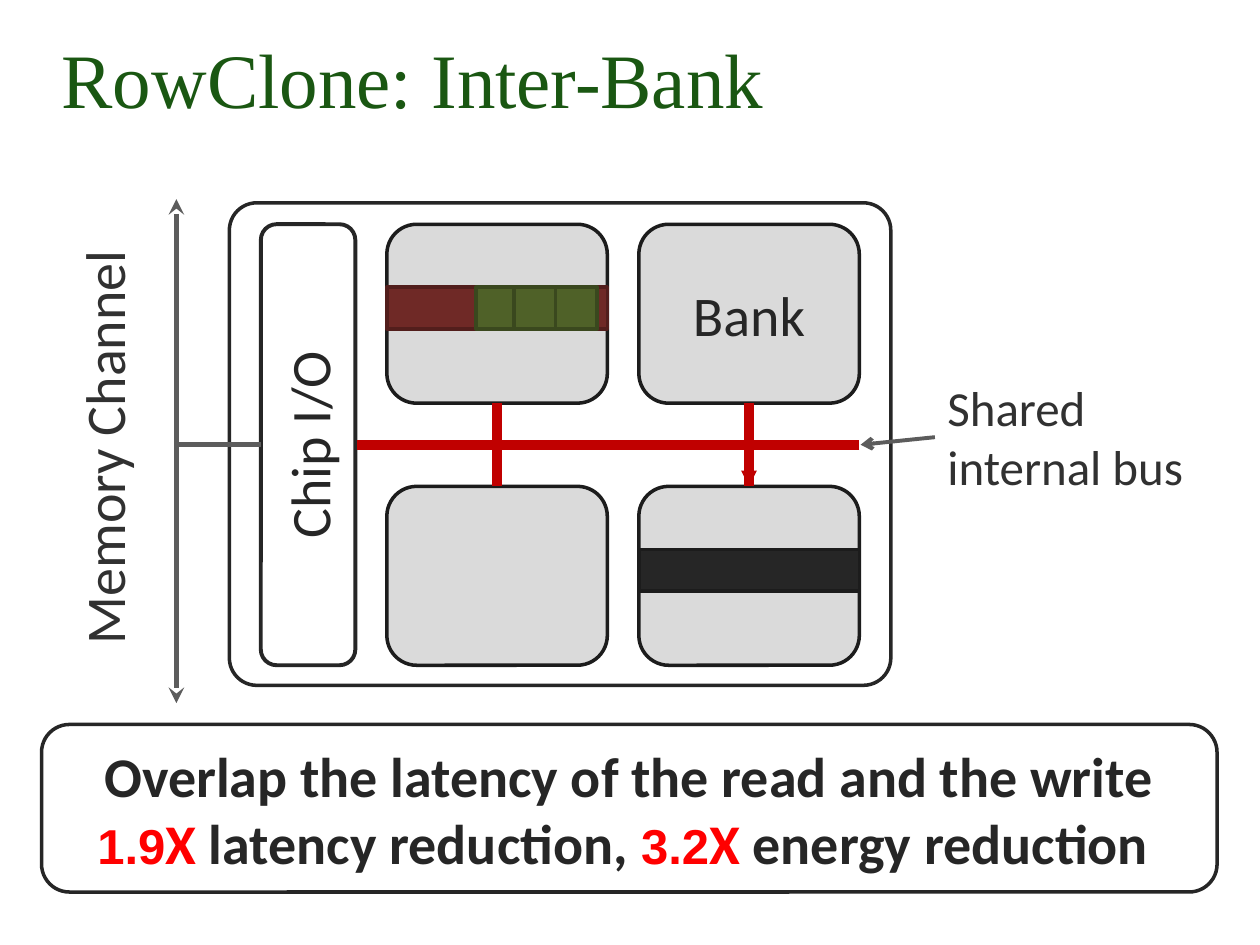
import lxml.etree
import pptx
import pptx.util
import pptx.dml.color
import pptx.enum.shapes
import pptx.enum.text
import pptx.oxml.ns

Inches, Pt = pptx.util.Inches, pptx.util.Pt
RGBColor = pptx.dml.color.RGBColor
SHAPE = pptx.enum.shapes.MSO_SHAPE
CONNECTOR = pptx.enum.shapes.MSO_CONNECTOR
ALIGN = pptx.enum.text.PP_ALIGN
ANCHOR = pptx.enum.text.MSO_ANCHOR
qn = pptx.oxml.ns.qn

WHITE = RGBColor(0xFF, 0xFF, 0xFF)
TITLE_GREEN = RGBColor(0x1A, 0x57, 0x12)
DARK = RGBColor(0x26, 0x26, 0x26)
LABEL = RGBColor(0x31, 0x31, 0x31)
WIRE = RGBColor(0x5C, 0x5C, 0x5C)
BANK_FILL = RGBColor(0xDA, 0xDA, 0xDA)
BANK_LINE = RGBColor(0x1C, 0x1C, 0x1C)
BUS_RED = RGBColor(0xC0, 0x00, 0x00)
ROW_RED = RGBColor(0x6F, 0x29, 0x26)
ROW_RED_LINE = RGBColor(0x52, 0x1E, 0x1C)
DATA_GREEN = RGBColor(0x4F, 0x61, 0x28)
DATA_GREEN_LINE = RGBColor(0x3A, 0x48, 0x1E)
RED = RGBColor(0xFF, 0x00, 0x00)


def set_font(font, size, color, name="Calibri", bold=None):
    font.name, font.size, font.bold = name, Pt(size), bold
    font.color.rgb = color


def add_box(shapes, kind, x, y, w, h, fill, line, width=2):
    sp = shapes.add_shape(kind, Inches(x), Inches(y), Inches(w), Inches(h))
    sp.shadow.inherit = False
    sp.fill.solid()
    sp.fill.fore_color.rgb = fill
    sp.line.color.rgb = line
    sp.line.width = Pt(width)
    return sp


def label_box(sp, text, bold=None):
    tf = sp.text_frame
    tf.vertical_anchor = ANCHOR.MIDDLE
    p = tf.paragraphs[0]
    p.text, p.alignment = text, ALIGN.CENTER
    set_font(p.font, 32, DARK, bold=bold)


def add_text(shapes, x, y, w, h, text, size, color, name="Calibri", wrap=True):
    sp = shapes.add_textbox(Inches(x), Inches(y), Inches(w), Inches(h))
    tf = sp.text_frame
    tf.word_wrap = wrap
    p = tf.paragraphs[0]
    p.text = text
    set_font(p.font, size, color, name)
    return sp


def add_line(shapes, x1, y1, x2, y2, color, width, head=None, tail=None,
             kind=CONNECTOR.STRAIGHT):
    c = shapes.add_connector(kind, Inches(x1), Inches(y1), Inches(x2), Inches(y2))
    c.line.color.rgb = color
    c.line.width = Pt(width)
    spPr = c._element.spPr
    ln = spPr.find(qn("a:ln"))
    for tag, arrow in (("a:headEnd", head), ("a:tailEnd", tail)):
        if arrow:
            lxml.etree.SubElement(ln, qn(tag), type=arrow)
    lxml.etree.SubElement(spPr, qn("a:effectLst"))
    return c


def add_title(shapes, x, y, w, h):
    sp = add_text(shapes, x, y, w, h, "RowClone: Inter-Bank", 44, TITLE_GREEN,
                  "Times New Roman")
    tf = sp.text_frame
    tf.margin_left = tf.margin_right = Inches(0.03)
    tf.margin_top = tf.margin_bottom = Inches(0.03)


def add_channel(shapes, x, y, h, chip_x, bus_y):
    """Vertical memory channel, its label and its link to the chip."""
    add_line(shapes, x, y, x, y + h, WIRE, 3, "stealth", "stealth")
    label = add_text(shapes, x - 2.26, bus_y - 0.3, 3.36, 0.64, "Memory Channel",
                     32, LABEL, wrap=False)
    label.rotation = 270
    label.text_frame.paragraphs[0].alignment = ALIGN.CENTER
    add_line(shapes, chip_x, bus_y, x, bus_y, WIRE, 3)


def add_chip(shapes, x, y, w, h):
    """Chip outline, I/O block, 2 x 2 banks, internal bus and copied rows."""
    chip = add_box(shapes, SHAPE.ROUNDED_RECTANGLE, x, y, w, h, WHITE, DARK)
    chip.adjustments[0] = 0.057
    io_x, top, inner_h = x + 0.25, y + 0.17, h - 0.33
    bank_w, bank_h, row_h = 1.75, 1.42, 0.33
    cols = [x + 1.25, x + 3.25]
    rows = [top, top + inner_h - bank_h]
    mids = [col + bank_w / 2 for col in cols]
    bus_y = top + inner_h / 2

    # Chip I/O, with upward text
    chip_io = add_box(shapes, SHAPE.ROUNDED_RECTANGLE, io_x, top, 0.75, inner_h,
                      WHITE, DARK, 2.25)
    label_box(chip_io, "Chip I/O")
    chip_io.text_frame._txBody.find(qn("a:bodyPr")).set("vert", "vert270")

    # Banks
    banks = [add_box(shapes, SHAPE.ROUNDED_RECTANGLE, col, row, bank_w, bank_h,
                     BANK_FILL, BANK_LINE) for row in rows for col in cols]
    label_box(banks[1], "Bank")

    # Shared internal bus
    gap_top, gap_bottom = rows[0] + bank_h, rows[1]
    bus = shapes.add_group_shape().shapes
    add_line(bus, cols[1] + bank_w, bus_y, io_x + 0.76, bus_y, BUS_RED, 6)
    for mid in mids:
        add_line(bus, mid, gap_top, mid, gap_bottom, BUS_RED, 6)

    # Source and destination rows
    add_box(shapes, SHAPE.RECTANGLE, cols[0], rows[0] + 0.5, bank_w, row_h,
            ROW_RED, ROW_RED_LINE)
    add_box(shapes, SHAPE.RECTANGLE, cols[1], rows[1] + 0.5, bank_w, row_h,
            DARK, BANK_LINE)

    # Copy path: an elbow turned a quarter so that it leaves downwards
    half_w, half_h = (gap_bottom - gap_top) / 2, (mids[1] - mids[0]) / 2
    mid_x = sum(mids) / 2
    copy_line = add_line(shapes, mid_x + half_w, bus_y - half_h, mid_x - half_w,
                         bus_y + half_h, BUS_RED, 3, tail="triangle",
                         kind=CONNECTOR.ELBOW)
    copy_line._element.spPr.find(qn("a:xfrm")).set("rot", str(270 * 60000))

    # Data blocks in the source row
    for offset in (0.71, 1.01, 1.34):
        add_box(shapes, SHAPE.RECTANGLE, cols[0] + offset, rows[0] + 0.5, row_h,
                row_h, DATA_GREEN, DATA_GREEN_LINE)


def add_bus_label(shapes, x, y, w, h, bus_x, bus_y):
    add_text(shapes, x, y, w, h, "Shared internal bus", 28, LABEL)
    add_line(shapes, x, y + h / 2, bus_x, bus_y, WIRE, 2.25, tail="arrow")


def add_summary(shapes, x, y, w, h):
    sp = add_box(shapes, SHAPE.ROUNDED_RECTANGLE, x, y, w, h, WHITE, DARK)
    label_box(sp, "Overlap the latency of the read and the write", bold=True)
    p = sp.text_frame.add_paragraph()
    p.alignment = ALIGN.CENTER
    for number, words in (("1.9", " latency reduction, "),
                          ("3.2", " energy reduction ")):
        for text, size, color, name in ((number, 28, RED, "Arial"),
                                        ("X", 32, RED, "Calibri"),
                                        (words, 32, DARK, "Calibri")):
            r = p.add_run()
            r.text = text
            set_font(r.font, size, color, name, True)


def main():
    prs = pptx.Presentation()
    prs.slide_width, prs.slide_height = Inches(10), Inches(7.5)
    s = prs.slides.add_slide(prs.slide_layouts[6])
    bus_y = 3.53
    add_title(s.shapes, 0.46, 0.22, 8.83, 0.61)
    add_chip(s.shapes, 1.82, 1.61, 5.25, 3.83)
    add_channel(s.shapes, 1.4, 1.58, 4, 2.07, bus_y)
    add_bus_label(s.shapes, 7.42, 2.95, 2.25, 1.04, 6.83, bus_y)
    add_summary(s.shapes, 0.33, 5.75, 9.33, 1.33)
    prs.save("out.pptx")


if __name__ == "__main__":
    main()
